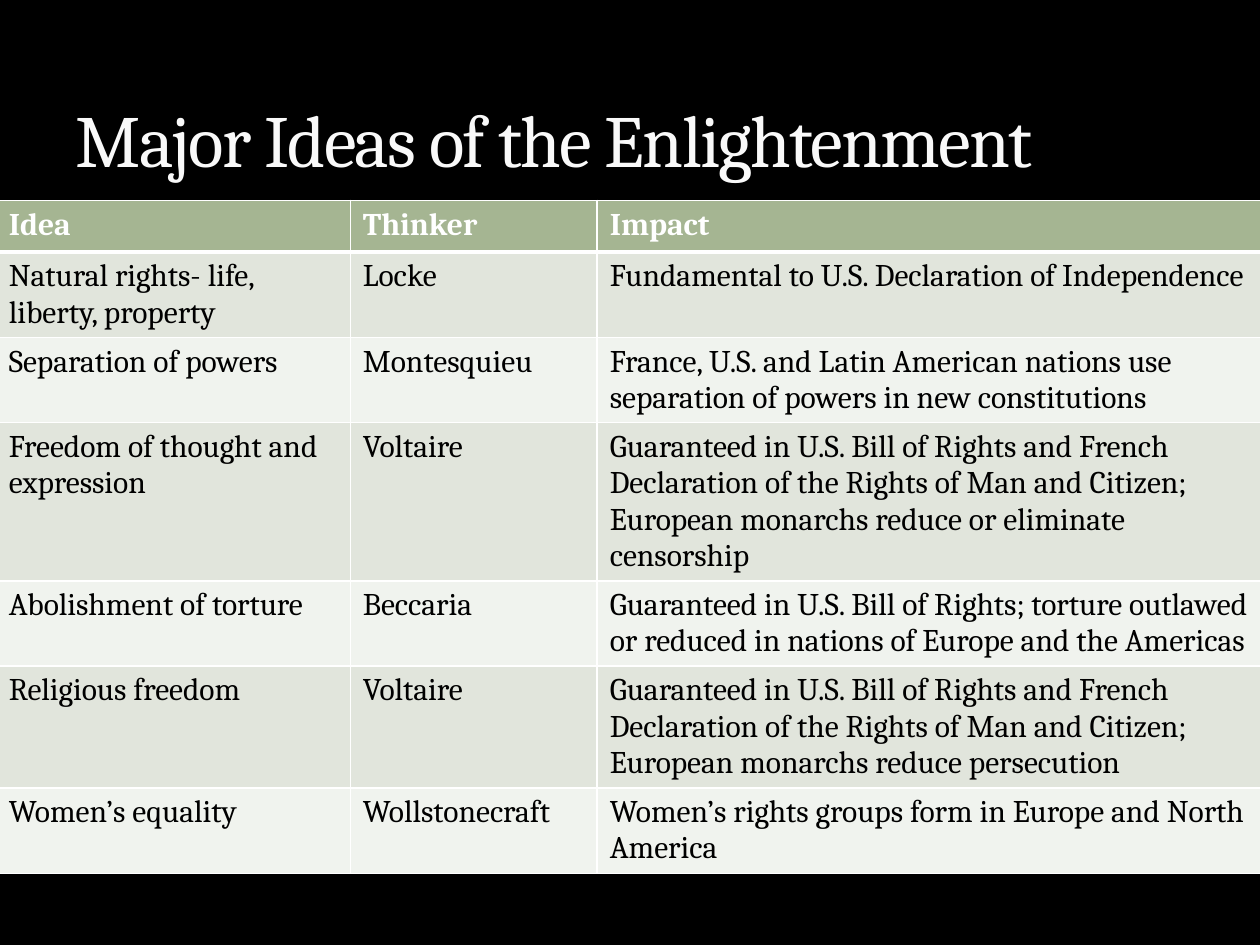
from dataclasses import dataclass

from lxml.etree import SubElement
from pptx import Presentation
from pptx.dml.color import RGBColor as RGB
from pptx.enum.text import MSO_ANCHOR as ANCHOR, PP_ALIGN as ALIGN
from pptx.oxml import parse_xml
from pptx.oxml.ns import nsdecls, qn
from pptx.util import Inches, Pt


@dataclass(frozen=True)
class Theme:
    font: str = "Cambria"
    background: str = "000000"
    title: str = "F9F9F9"
    title_outline: str = "3C4422"
    header_text: str = "FFFFFF"
    body_text: str = "000000"
    header_fill: str = "A5B592"
    bands: tuple = ("E1E5DC", "F0F3EE")
    border: str = "FFFFFF"
    title_size: int = 42
    table_size: int = 18
    thin: int = 1
    thick: int = 3


THEME = Theme()

COLUMN_WIDTHS = (2.81, 1.96, 5.27)
ROW_HEIGHT = 0.41
ROWS = (
    ("Idea", "Thinker", "Impact"),
    ("Natural rights- life, liberty, property", "Locke",
     "Fundamental to U.S. Declaration of Independence"),
    ("Separation of powers", "Montesquieu",
     "France, U.S. and Latin American nations use separation of powers "
     "in new constitutions"),
    ("Freedom of thought and expression", "Voltaire",
     "Guaranteed in U.S. Bill of Rights and French Declaration of the Rights "
     "of Man and Citizen; European monarchs reduce or eliminate censorship"),
    ("Abolishment of torture", "Beccaria",
     "Guaranteed in U.S. Bill of Rights; torture outlawed or reduced in "
     "nations of Europe and the Americas"),
    ("Religious freedom", "Voltaire",
     "Guaranteed in U.S. Bill of Rights and French Declaration of the Rights "
     "of Man and Citizen; European monarchs reduce persecution"),
    ("Women’s equality", "Wollstonecraft",
     "Women’s rights groups form in Europe and North America"),
)


def format_run(r, color, **values):
    for name, value in {"name": THEME.font, **values}.items():
        setattr(r.font, name, value)
    r.font.color.rgb = RGB.from_string(color)


def set_borders(cell, widths):
    # Border lines come before the fill, in the order left, right, top, bottom
    tc_pr = cell._tc.get_or_add_tcPr()
    for i, side in enumerate("LRTB"):
        ln = parse_xml(f'<a:ln{side} {nsdecls("a")} w="{Pt(widths[side])}"/>')
        fill = SubElement(ln, qn("a:solidFill"))
        SubElement(fill, qn("a:srgbClr"), val=THEME.border)
        tc_pr.insert(i, ln)


def add_title(slide, box, text):
    sp = slide.shapes.title
    for name, value in zip(("left", "top", "width", "height"), box):
        setattr(sp, name, Inches(value))
    tf = sp.text_frame
    tf.word_wrap = True
    tf.vertical_anchor = ANCHOR.BOTTOM
    p = tf.paragraphs[0]
    p.alignment = ALIGN.LEFT
    r = p.add_run()
    r.text = text
    format_run(r, THEME.title, size=Pt(THEME.title_size))

    # Tight letter spacing and a faint outline
    r_pr = r._r.get_or_add_rPr()
    r_pr.set("spc", "-100")
    r_pr.insert(0, parse_xml(
        f'<a:ln {nsdecls("a")} w="{Pt(0.25)}"><a:solidFill>'
        f'<a:srgbClr val="{THEME.title_outline}"><a:alpha val="25000"/>'
        '</a:srgbClr></a:solidFill></a:ln>'))


def add_ideas_table(slide, box, rows):
    frame = slide.shapes.add_table(len(rows), len(COLUMN_WIDTHS),
                                   *(Inches(v) for v in box))
    table = frame.table
    table.horz_banding = False
    for column, width in zip(table.columns, COLUMN_WIDTHS):
        column.width = Inches(width)
    for row in table.rows:
        row.height = Inches(ROW_HEIGHT)

    for i, texts in enumerate(rows):
        header = i == 0
        fill = THEME.header_fill if header else THEME.bands[(i - 1) % 2]
        color = THEME.header_text if header else THEME.body_text
        widths = dict.fromkeys("LRTB", THEME.thin)
        # The rule under the header is shared by the first two rows
        if i < 2:
            widths["B" if header else "T"] = THEME.thick
        for j, text in enumerate(texts):
            cell = table.cell(i, j)
            cell.fill.solid()
            cell.fill.fore_color.rgb = RGB.from_string(fill)
            set_borders(cell, widths)
            r = cell.text_frame.paragraphs[0].add_run()
            r.text = text
            format_run(r, color, size=Pt(THEME.table_size), bold=header)


def main():
    prs = Presentation()
    prs.slide_width, prs.slide_height = Inches(10), Inches(7.5)
    slide = prs.slides.add_slide(prs.slide_layouts[5])
    background = slide.background.fill
    background.solid()
    background.fore_color.rgb = RGB.from_string(THEME.background)

    add_ideas_table(slide, (-0.03, 1.59, 10.04, 5.81), ROWS)
    add_title(slide, (0.5, 0.17, 9, 1.33), "Major Ideas of the Enlightenment")
    prs.save("out.pptx")


if __name__ == "__main__":
    main()
